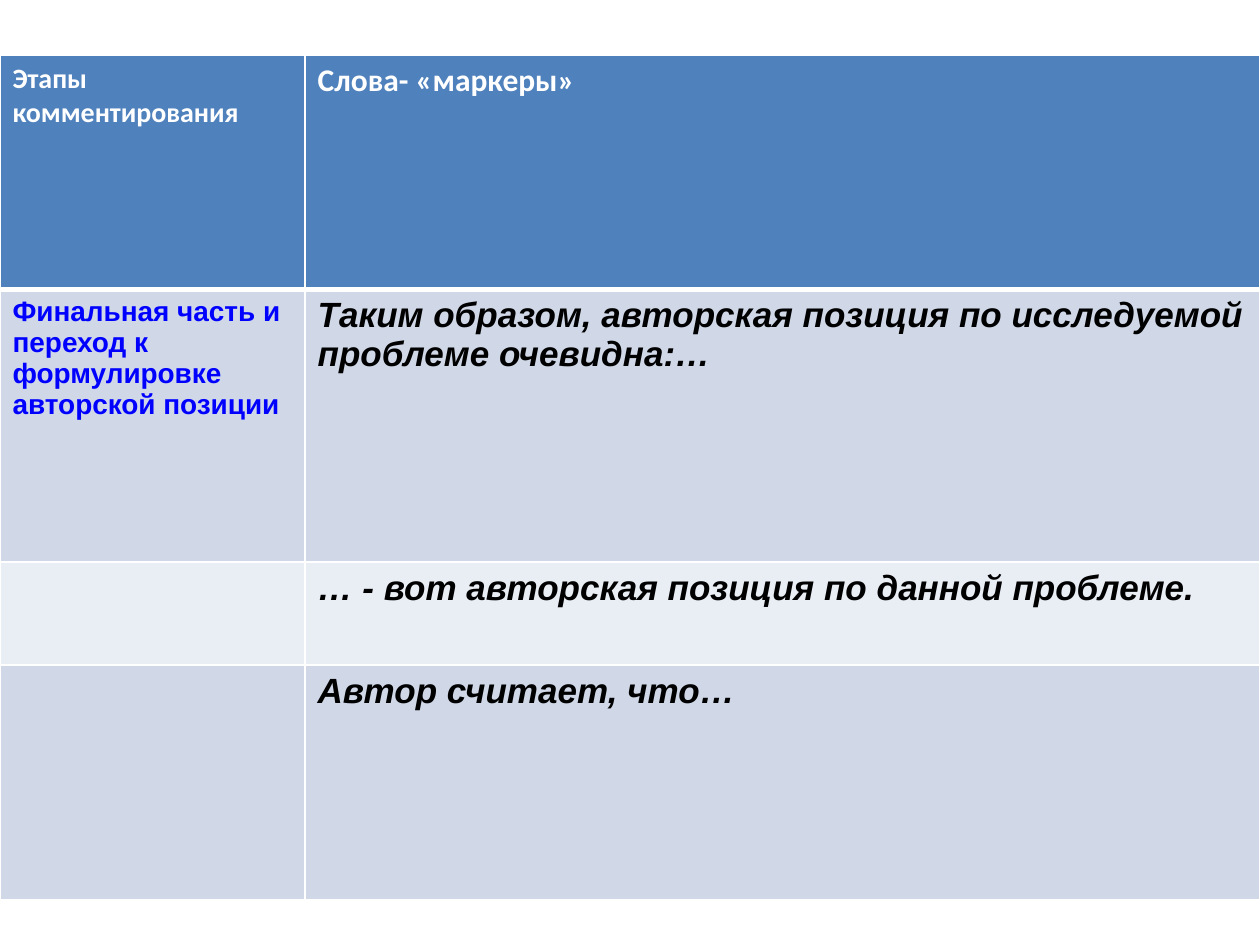
import pptx
import pptx.dml.color
import pptx.oxml
import pptx.oxml.ns
import pptx.util

Cm = pptx.util.Cm
Pt = pptx.util.Pt
RGB = pptx.dml.color.RGBColor.from_string

COLORS = {
    "header": "4F81BD",
    "dark_band": "D0D8E8",
    "light_band": "E9EDF4",
    "border": "FFFFFF",
    "header_text": "FFFFFF",
    "stage_text": "0000FF",
    "marker_text": "000000",
}


def add_border(cell, side, width):
    ln = pptx.oxml.parse_xml(
        f'<a:ln{side} {pptx.oxml.ns.nsdecls("a")} w="{Pt(width)}"><a:solidFill>'
        f'<a:srgbClr val="{COLORS["border"]}"/></a:solidFill></a:ln{side}>'
    )
    cell._tc.get_or_add_tcPr().append(ln)


prs = pptx.Presentation()
prs.slide_width = Cm(25.4)
prs.slide_height = Cm(19.05)
s = prs.slides.add_slide(prs.slide_layouts[6])

col_widths = [6.15, 19.25]
row_heights = [4.72, 5.49, 2.08, 4.72]
fills = ["header", "dark_band", "light_band", "dark_band"]
rows = [
    ["Этапы комментирования", "Слова- «маркеры»"],
    [
        "Финальная часть и переход к формулировке авторской позиции",
        "Таким образом, авторская позиция по исследуемой проблеме очевидна:…",
    ],
    ["", "… - вот авторская позиция по данной проблеме."],
    ["", "Автор считает, что…"],
]
header_styles = [("Calibri", 16, "header_text", False), ("Calibri", 18, "header_text", False)]
body_styles = [("Arial", 16, "stage_text", False), ("Arial", 20, "marker_text", True)]

table = s.shapes.add_table(
    len(rows), len(col_widths), Cm(0), Cm(1.12), Cm(sum(col_widths)), Cm(sum(row_heights))
).table
for col, width in zip(table.columns, col_widths):
    col.width = Cm(width)
for row, height in zip(table.rows, row_heights):
    row.height = Cm(height)

for i, texts in enumerate(rows):
    styles = header_styles if i == 0 else body_styles
    for j, (text, style) in enumerate(zip(texts, styles)):
        cell = table.cell(i, j)
        for side in "LRTB":
            heavy = (i, side) in [(0, "B"), (1, "T")]
            add_border(cell, side, 3 if heavy else 1)
        cell.fill.solid()
        cell.fill.fore_color.rgb = RGB(COLORS[fills[i]])
        cell.text = text
        font = cell.text_frame.paragraphs[0].font
        font.name, size, color, font.italic = style
        font.size = Pt(size)
        font.bold = True
        font.color.rgb = RGB(COLORS[color])

prs.save("out.pptx")
